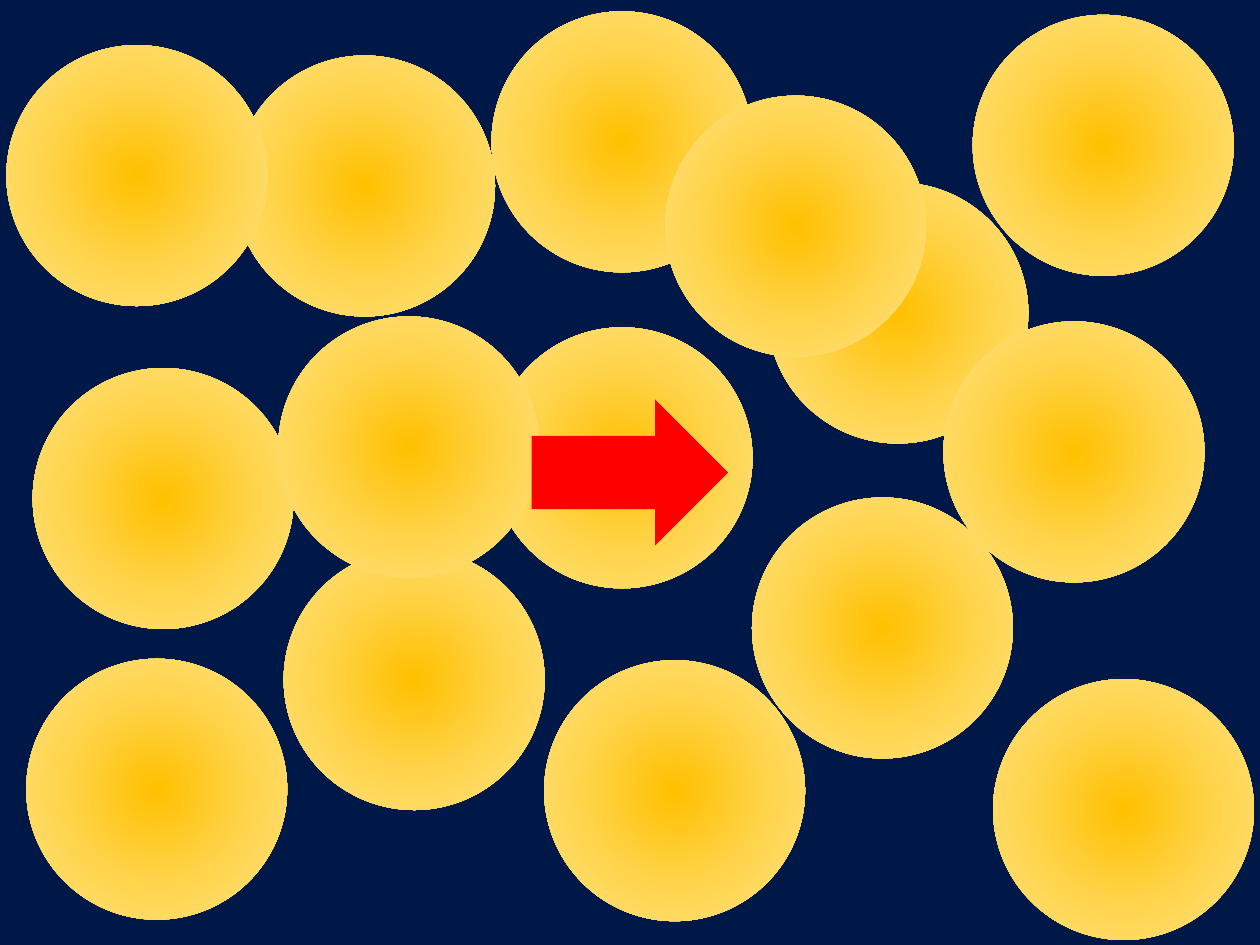
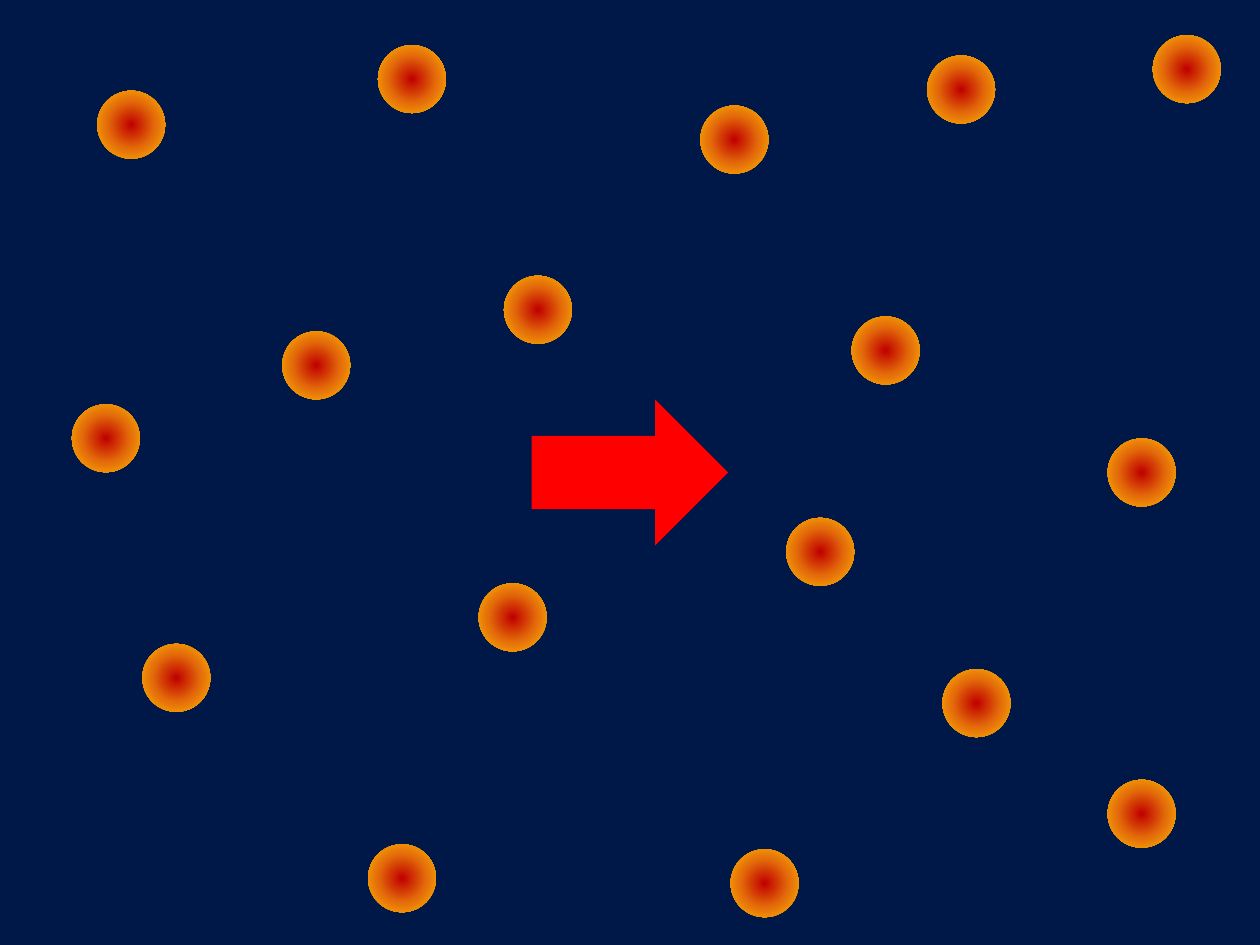
import dataclasses

import pptx
import pptx.dml.color
import pptx.enum.shapes
import pptx.oxml
import pptx.oxml.ns
import pptx.util

Cm = pptx.util.Cm
SHAPE = pptx.enum.shapes.MSO_SHAPE


@dataclasses.dataclass(frozen=True)
class Theme:
    night: str = "001848"
    arrow: str = "FF0000"
    # Radial colours, from the centre outwards
    yellow_glow: tuple = ("FFC000", "FFD44B", "FFE285")
    ember_glow: tuple = ("C00000", "E46C0A", "FFC000")


THEME = Theme()
SLIDE_WIDTH, SLIDE_HEIGHT = 25.4, 19.05
ARROW_WIDTH, ARROW_HEIGHT = 3.96, 2.95

# Left and top of each disc in cm, from back to front
LARGE_DIAMETER = 5.26
LARGE_DISCS = [
    (9.91, 6.6), (4.72, 1.12), (20.02, 13.69), (5.72, 11.07), (15.47, 3.68),
    (0.66, 7.42), (10.97, 13.31), (9.91, 0.23), (19.02, 6.48), (19.61, 0.3),
    (5.61, 6.38), (13.41, 1.93), (0.53, 13.28), (15.16, 10.03), (0.13, 0.91),
]
SMALL_DIAMETER = 1.37
SMALL_DISCS = [
    (7.42, 17.02), (22.33, 8.84), (15.85, 10.44), (1.96, 1.83), (5.69, 6.68),
    (1.45, 8.15), (9.65, 11.76), (7.62, 0.91), (19.0, 13.49), (17.17, 6.38),
    (10.16, 5.56), (14.12, 2.13), (22.33, 15.72), (23.24, 0.71), (2.87, 12.98),
    (14.73, 17.12), (18.69, 1.12),
]


def add_plain_shape(slide, preset, left, top, width, height, colour):
    """Add a preset shape with a flat fill, no outline and no shadow."""
    shape = slide.shapes.add_shape(preset, Cm(left), Cm(top), Cm(width), Cm(height))
    shape.shadow.inherit = False
    shape.line.fill.background()
    shape.fill.solid()
    shape.fill.fore_color.rgb = pptx.dml.color.RGBColor.from_string(colour)
    return shape


def set_radial_fill(shape, colours):
    """Swap the flat fill for evenly spaced colours spreading from the centre."""
    step = 100000 // (len(colours) - 1)
    stops = "".join(
        f'<a:gs pos="{index * step}"><a:srgbClr val="{colour}"/></a:gs>'
        for index, colour in enumerate(colours)
    )
    radial = pptx.oxml.parse_xml(
        f'<a:gradFill {pptx.oxml.ns.nsdecls("a")} rotWithShape="1">'
        f'<a:gsLst>{stops}</a:gsLst><a:path path="circle">'
        '<a:fillToRect l="50000" t="50000" r="50000" b="50000"/>'
        '</a:path></a:gradFill>'
    )
    properties = shape.element.spPr
    properties.replace(properties.find(pptx.oxml.ns.qn("a:solidFill")), radial)


def add_disc(slide, left, top, diameter, glow):
    disc = add_plain_shape(slide, SHAPE.OVAL, left, top, diameter, diameter, glow[0])
    set_radial_fill(disc, glow)


def add_centre_arrow(slide):
    add_plain_shape(
        slide, SHAPE.RIGHT_ARROW,
        (SLIDE_WIDTH - ARROW_WIDTH) / 2, (SLIDE_HEIGHT - ARROW_HEIGHT) / 2,
        ARROW_WIDTH, ARROW_HEIGHT, THEME.arrow,
    )


def add_disc_slide(deck, positions, diameter, glow):
    """Night backdrop, scattered discs, then the arrow on top."""
    slide = deck.slides.add_slide(deck.slide_layouts[6])
    add_plain_shape(slide, SHAPE.RECTANGLE, 0, 0, SLIDE_WIDTH, SLIDE_HEIGHT, THEME.night)
    for left, top in positions:
        add_disc(slide, left, top, diameter, glow)
    add_centre_arrow(slide)


def main():
    deck = pptx.Presentation()
    deck.slide_width, deck.slide_height = Cm(SLIDE_WIDTH), Cm(SLIDE_HEIGHT)
    add_disc_slide(deck, LARGE_DISCS, LARGE_DIAMETER, THEME.yellow_glow)
    add_disc_slide(deck, SMALL_DISCS, SMALL_DIAMETER, THEME.ember_glow)
    deck.save("out.pptx")


if __name__ == "__main__":
    main()
